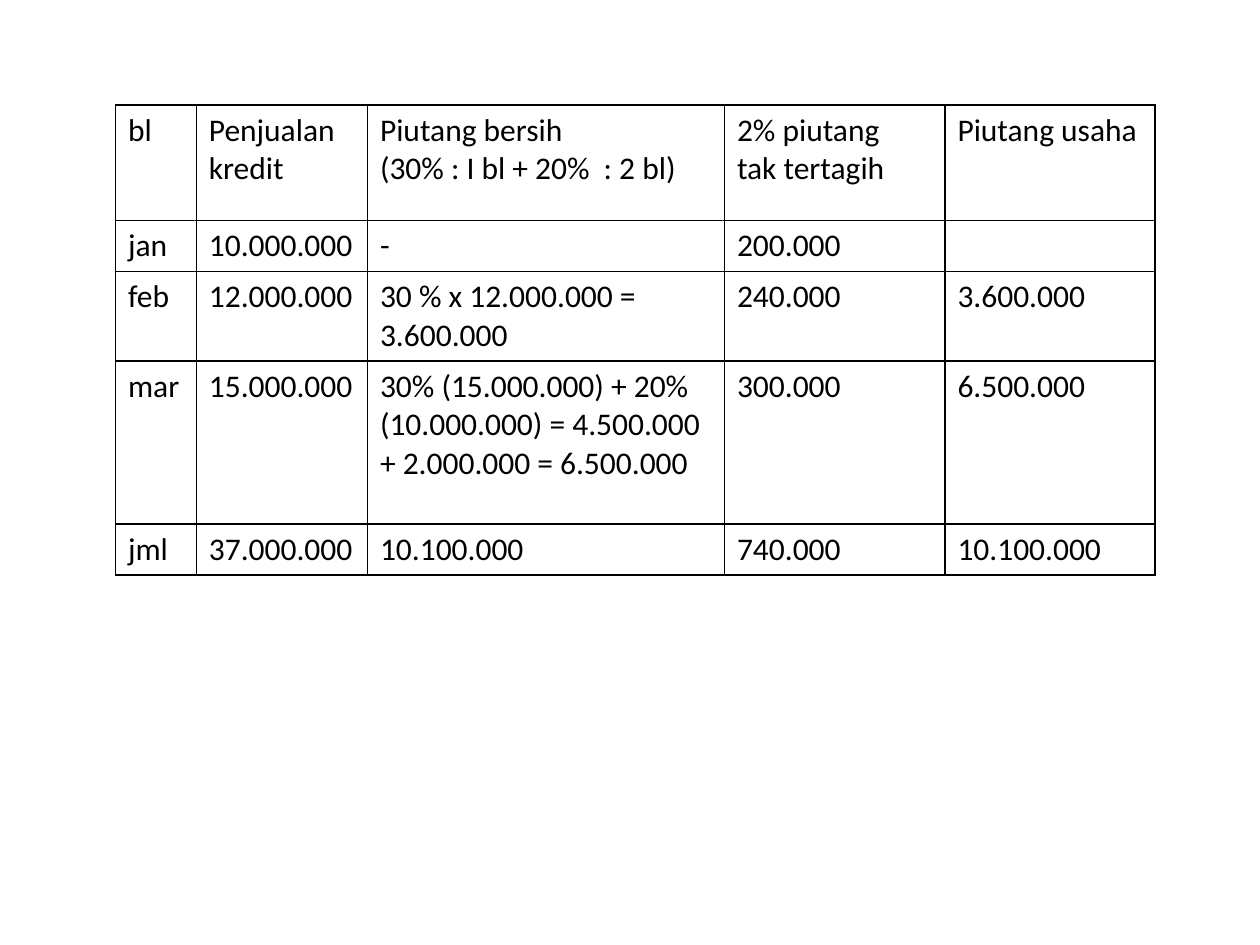
from lxml import etree
from pptx import Presentation
from pptx.dml.color import RGBColor
from pptx.oxml.ns import qn
from pptx.util import Pt

BLACK = RGBColor(0, 0, 0)
FONT = "Calibri"
COL_WIDTHS = [46.2, 97.8, 204, 126, 120]
ROW_HEIGHTS = [66, 29.2, 51, 93, 29.2]
ROWS = [
    ["bl", "Penjualan kredit", "Piutang bersih\n(30% : I bl + 20%  : 2 bl)",
     "2% piutang\ntak tertagih", "Piutang usaha"],
    ["jan", "10.000.000", "-", "200.000", ""],
    ["feb", "12.000.000", "30 % x 12.000.000 = 3.600.000", "240.000", "3.600.000"],
    ["mar", "15.000.000",
     "30% (15.000.000) + 20% (10.000.000) = 4.500.000 + 2.000.000 = 6.500.000",
     "300.000", "6.500.000"],
    ["jml", "37.000.000", "10.100.000", "740.000", "10.100.000"],
]


def add_borders(cell):
    tc_pr = cell._tc.get_or_add_tcPr()
    for i, side in enumerate(("lnL", "lnR", "lnT", "lnB")):
        ln = etree.Element(qn(f"a:{side}"), w=str(Pt(1)))
        fill = etree.SubElement(ln, qn("a:solidFill"))
        etree.SubElement(fill, qn("a:srgbClr"), val=str(BLACK))
        tc_pr.insert(i, ln)


prs = Presentation()
prs.slide_width, prs.slide_height = Pt(720), Pt(540)
s = prs.slides.add_slide(prs.slide_layouts[6])

table = s.shapes.add_table(
    len(ROWS), len(COL_WIDTHS), Pt(66), Pt(60),
    Pt(sum(COL_WIDTHS)), Pt(sum(ROW_HEIGHTS))).table
table.first_row = False
table.horz_banding = False
for column, width in zip(table.columns, COL_WIDTHS):
    column.width = Pt(width)
for row, height, texts in zip(table.rows, ROW_HEIGHTS, ROWS):
    row.height = Pt(height)
    for cell, text in zip(row.cells, texts):
        cell.fill.background()
        add_borders(cell)
        tf = cell.text_frame
        for i, line in enumerate(text.splitlines()):
            p = tf.add_paragraph() if i else tf.paragraphs[0]
            r = p.add_run()
            r.text = line
            r.font.name = FONT
            r.font.size = Pt(18)
            r.font.color.rgb = BLACK

prs.save("out.pptx")
